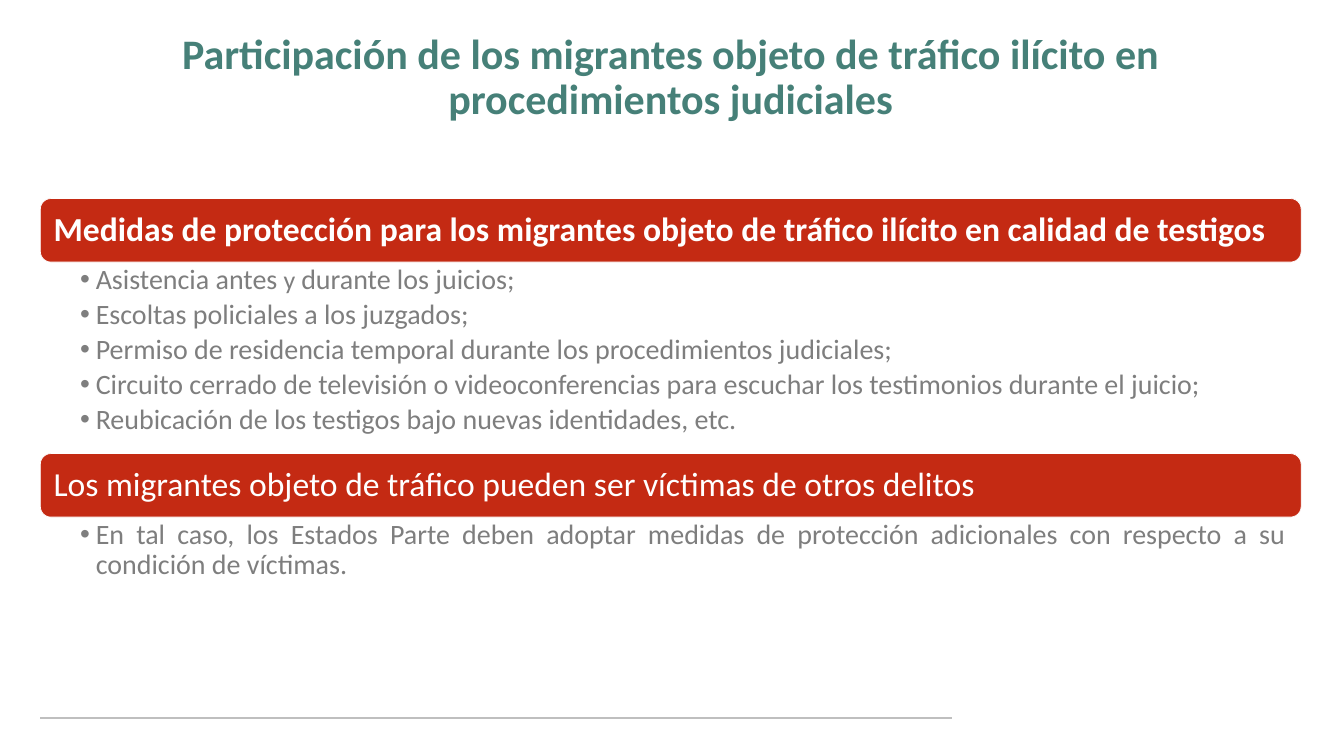
from pptx import Presentation
from pptx import util as u
from pptx.dml.color import RGBColor
from pptx.enum import shapes, text
from pptx.oxml import parse_xml
from pptx.oxml.ns import nsdecls

COLORS = {"title": "468078", "bar": "C42A13", "white": "FFFFFF",
          "body": "7E7E7E", "rule": "BFBFBF"}
FONT = "Calibri"
LEFT, WIDTH, BAR_H = 0.8, 25.01, 1.26
TOP = 3.94

TITLE = "Participación de los migrantes objeto de tráfico ilícito en procedimientos judiciales"
JUSTIFY, START = text.PP_ALIGN.JUSTIFY, text.PP_ALIGN.LEFT
SECTIONS = [
    {"heading": "Medidas de protección para los migrantes objeto de tráfico ilícito en calidad de testigos",
     "bold": True, "heading_align": JUSTIFY, "body_align": START, "height": 3.8,
     "items": [
         [("Asistencia antes ", 40), ("y ", 37), ("durante los juicios;", 40)],
         [("Escoltas policiales a los juzgados;", 40)],
         [("Permiso de residencia temporal durante los procedimientos judiciales;", 40)],
         [("Circuito cerrado de televisión o videoconferencias para escuchar los testimonios durante el juicio;", 40)],
         [("Reubicación de los testigos bajo nuevas identidades, etc.", 40)]]},
    {"heading": "Los migrantes objeto de tráfico pueden ser víctimas de otros delitos",
     "bold": False, "heading_align": START, "body_align": JUSTIFY, "height": 1.36,
     "items": [
         [("En tal caso, los Estados Parte deben adoptar medidas de protección adicionales "
           "con respecto a su condición de víctimas.", 40)]]},
]


def rgb(name):
    return RGBColor.from_string(COLORS[name])


def setup_frame(sp, insets, anchor):
    tf = sp.text_frame
    tf.word_wrap = True
    tf.vertical_anchor = anchor
    tf.margin_left, tf.margin_top, tf.margin_right, tf.margin_bottom = map(u.Inches, insets)
    return tf


def add_runs(p, runs, color, align, bold=False):
    p.alignment = align
    p.line_spacing = 0.9
    for content, size in runs:
        r = p.add_run()
        r.text = content
        r.font.name, r.font.size, r.font.bold = FONT, u.Pt(size), bold
        r.font.color.rgb = rgb(color)


def add_bullet(p):
    pPr = p._p.get_or_add_pPr()
    pPr.set("lvl", "1")
    pPr.set("marL", str(u.Inches(0.31)))
    pPr.set("indent", str(u.Inches(-0.31)))
    pPr.append(parse_xml(f'<a:buFont {nsdecls("a")} typeface="Arial"/>'))
    pPr.append(parse_xml(f'<a:buChar {nsdecls("a")} char="•"/>'))


def add_box(s, top, height):
    return s.shapes.add_textbox(*map(u.Inches, (LEFT, top, WIDTH, height)))


def add_bar(s, top, section):
    sp = s.shapes.add_shape(shapes.MSO_SHAPE.ROUNDED_RECTANGLE,
                            *map(u.Inches, (LEFT, top, WIDTH, BAR_H)))
    sp.shadow.inherit = False
    sp.fill.solid()
    sp.fill.fore_color.rgb = rgb("bar")
    sp.line.color.rgb = rgb("white")
    sp.line.width = u.Pt(1)
    tf = setup_frame(sp, (0.2, 0.2, 0.2, 0.2), text.MSO_ANCHOR.MIDDLE)
    add_runs(tf.paragraphs[0], [(section["heading"], 48)], "white",
             section["heading_align"], section["bold"])


def add_list(s, top, section):
    tf = setup_frame(add_box(s, top, section["height"]),
                     (0.79, 0.06, 0.31, 0.06), text.MSO_ANCHOR.TOP)
    for i, runs in enumerate(section["items"]):
        p = tf.add_paragraph() if i else tf.paragraphs[0]
        add_bullet(p)
        add_runs(p, runs, "body", section["body_align"])
        p.space_after = u.Pt(7)


def main():
    prs = Presentation()
    prs.slide_width, prs.slide_height = u.Inches(26.66), u.Inches(15)
    s = prs.slides.add_slide(prs.slide_layouts[6])

    rule = s.shapes.add_connector(shapes.MSO_CONNECTOR.STRAIGHT,
                                  *map(u.Inches, (LEFT, 14.25, 18.88, 14.25)))
    rule.line.color.rgb = rgb("rule")
    rule.line.width = u.Pt(2.25)
    rule._element.spPr.append(parse_xml(f'<a:effectLst {nsdecls("a")}/>'))

    tf = setup_frame(add_box(s, 0.55, 2.9), (0.2, 0.1, 0.2, 0.1), text.MSO_ANCHOR.TOP)
    add_runs(tf.paragraphs[0], [(TITLE, 60)], "title", text.PP_ALIGN.CENTER, True)

    top = TOP
    for section in SECTIONS:
        add_bar(s, top, section)
        add_list(s, top + BAR_H, section)
        top += BAR_H + section["height"]

    prs.save("out.pptx")


if __name__ == "__main__":
    main()
